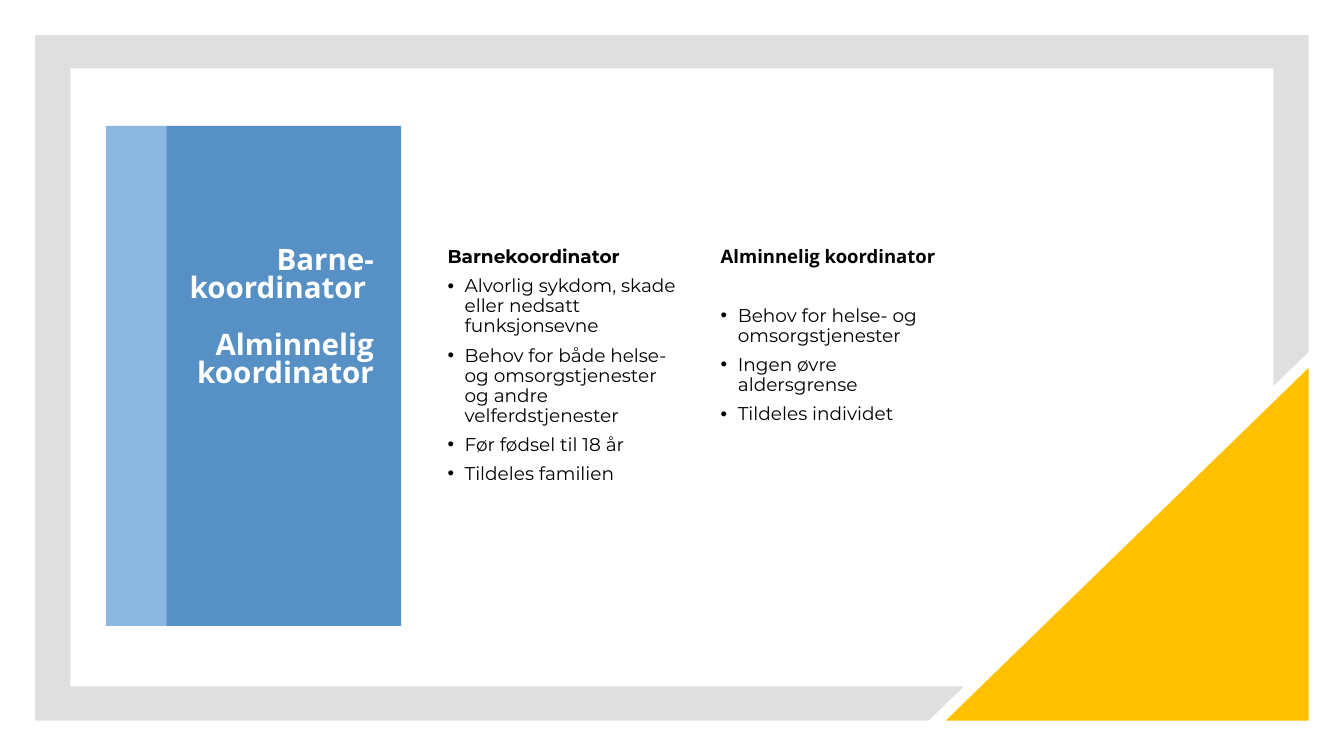
from pptx import Presentation
from pptx.dml.color import RGBColor as Rgb
from pptx.enum.shapes import MSO_SHAPE as Kind
from pptx.enum.text import MSO_ANCHOR as Anchor, MSO_AUTO_SIZE as Fit, PP_ALIGN as Align
from pptx.oxml.ns import qn
from pptx.util import Inches as In, Pt
from lxml.etree import SubElement as Sub

HUES = {"frame": "808080", "gold": "FFC000", "light": "5B9BD5",
        "deep": "2E75B6", "white": "FFFFFF", "black": "000000"}
WIDE, HIGH = 13.33, 7.5
TOP, TALL = 2.41, 3.26  # shared band of all text

deck = Presentation()
deck.slide_width, deck.slide_height = In(WIDE), In(HIGH)
slide = deck.slides.add_slide(deck.slide_layouts[5])
shapes = slide.shapes


def paint(shape, hue, alpha=100):
    shape.shadow.inherit = False
    shape.line.fill.background()
    shape.fill.solid()
    shape.fill.fore_color.rgb = Rgb.from_string(HUES[hue])
    if alpha < 100:
        color = shape._element.spPr.find(qn("a:solidFill"))[0]
        Sub(color, qn("a:alpha"), val=str(alpha * 1000))


def write(par, text, font, size, hue, bold=False):
    run = par.add_run()
    run.text = text
    run.font.name, run.font.size, run.font.bold = font, Pt(size), bold
    run.font.color.rgb = Rgb.from_string(HUES[hue])


# Grey frame, cut off along the diagonal
edge, band = 0.35, 0.35
right, low = WIDE - edge, HIGH - edge
inner = 0.68
ring = [(edge, edge), (right, edge), (right, 3.49), (right - band, 3.83),
        (right - band, inner), (edge + band, inner), (edge + band, 6.81),
        (9.56, 6.81), (9.21, low), (edge, low)]
pts = [(In(x), In(y)) for x, y in ring]
pen = shapes.build_freeform(*pts[0])
pen.add_line_segments(pts[1:], close=True)
paint(pen.convert_to_shape(), "frame", 25)

# Gold corner
corner = shapes.add_shape(Kind.RIGHT_TRIANGLE, In(right - 3.6), In(low - 3.5), In(3.6), In(3.5))
corner._element.spPr.find(qn("a:xfrm")).set("flipH", "1")
paint(corner, "gold")

# Blue panel in two shades
for left, width, hue, alpha in [(1.05, 0.6, "light", 70), (1.65, 2.33, "deep", 80)]:
    bar = shapes.add_shape(Kind.RECTANGLE, In(left), In(1.25), In(width), In(4.96))
    paint(bar, hue, alpha)

# Title, brought in front of the panel
title = shapes.title
shapes._spTree.append(title._element)
title.left, title.top, title.width, title.height = In(1.77), In(TOP), In(2.04), In(TALL)
frame = title.text_frame
frame.word_wrap, frame.auto_size = True, Fit.NONE
frame.vertical_anchor = Anchor.TOP
par = frame.paragraphs[0]
par.alignment, par.line_spacing = Align.RIGHT, 0.8
write(par, "Barne-koordinator ", "Open Sans", 21.1, "white", True)
for _ in range(2):
    par.add_line_break()
# A break takes its height from its own size
for gap in par._p.findall(qn("a:br")):
    mark = Sub(gap, qn("a:rPr"), sz="2110", b="1")
    Sub(mark, qn("a:latin"), typeface="Open Sans")
write(par, "Alminnelig koordinator", "Open Sans", 21.1, "white", True)

# Two columns: heading, heading font, space before the list, points
cols = [
    ("Barnekoordinator", "Montserrat", 6.6,
     ["Alvorlig sykdom, skade eller nedsatt funksjonsevne",
      "Behov for både helse- og omsorgstjenester og andre velferdstjenester",
      "Før fødsel til 18 år", "Tildeles familien"]),
    ("Alminnelig koordinator", "Open Sans", 27.6,
     ["Behov for helse- og omsorgstjenester",
      "Ingen øvre aldersgrense", "Tildeles individet"]),
]
for col, (head, font, gap, points) in enumerate(cols):
    box = shapes.add_textbox(In(4.34 + 2.71 * col), In(TOP), In(2.48), In(TALL))
    frame = box.text_frame
    frame.word_wrap = True
    par = frame.paragraphs[0]
    par.line_spacing = 0.9
    write(par, head, font, 13.2, "black", True)
    for row, point in enumerate(points):
        par = frame.add_paragraph()
        par.line_spacing = 0.9
        par.space_before = Pt(6.6 if row else gap)
        props = par._p.get_or_add_pPr()
        props.set("marL", str(In(0.17)))
        props.set("indent", str(-In(0.17)))
        Sub(props, qn("a:buFont"), typeface="Arial")
        Sub(props, qn("a:buChar"), char="•")
        write(par, point, "Montserrat", 13.2, "black")

deck.save("out.pptx")
